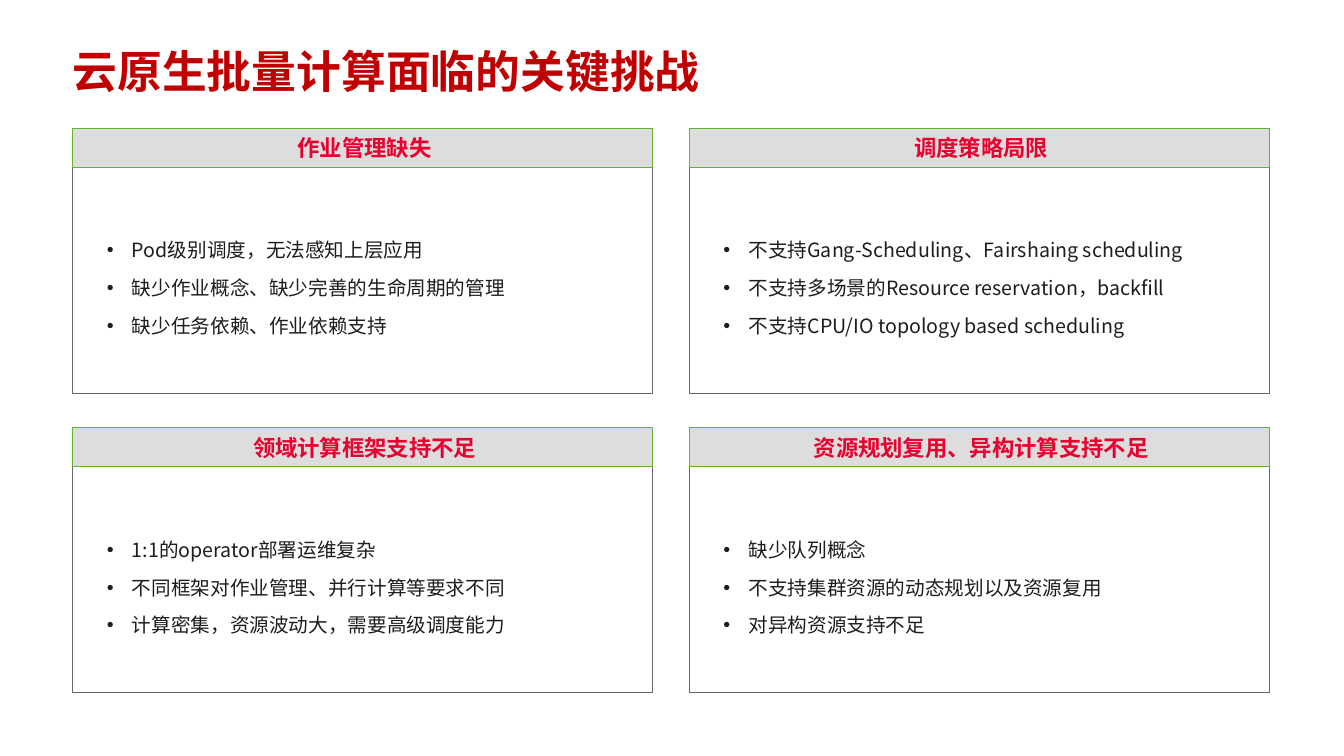
import pptx
import pptx.dml.color
import pptx.enum.shapes
import pptx.enum.text
import pptx.oxml.ns
import pptx.util
from lxml import etree
from pptx.util import Inches

CJK_FONT = "Noto Sans CJK SC"
LEFT, TOP = 0.72, 1.27
COLUMN_STEP, ROW_STEP = 6.12, 2.97
CARD_WIDTH, HEADER_HEIGHT, BODY_HEIGHT = 5.76, 0.39, 2.24
LIST_OFFSET, LIST_HEIGHT = 0.65, 1.73

CHALLENGES = [
    ("作业管理缺失", [
        "Pod级别调度，无法感知上层应用",
        "缺少作业概念、缺少完善的生命周期的管理",
        "缺少任务依赖、作业依赖支持",
    ]),
    ("调度策略局限", [
        "不支持Gang-Scheduling、Fairshaing scheduling",
        "不支持多场景的Resource reservation，backfill",
        "不支持CPU/IO topology based scheduling",
    ]),
    ("领域计算框架支持不足", [
        "1:1的operator部署运维复杂",
        "不同框架对作业管理、并行计算等要求不同",
        "计算密集，资源波动大，需要高级调度能力",
    ]),
    ("资源规划复用、异构计算支持不足", [
        "缺少队列概念",
        "不支持集群资源的动态规划以及资源复用",
        "对异构资源支持不足",
    ]),
]


def color(hex_value):
    return pptx.dml.color.RGBColor.from_string(hex_value)


def add_bullet(paragraph):
    properties = paragraph._p.get_or_add_pPr()
    properties.set("marL", str(Inches(0.59)))
    properties.set("indent", str(Inches(-0.25)))
    for tag, attribute, value in (("a:buFont", "typeface", "Arial"), ("a:buChar", "char", "•")):
        element = etree.SubElement(properties, pptx.oxml.ns.qn(tag))
        element.set(attribute, value)


def write_text(shape, lines, *, size, hex_color, font=CJK_FONT, bold=False,
               anchor="MIDDLE", align="LEFT", line_spacing=None, bullets=False):
    """Fill a shape with one paragraph per line, without inner margins."""
    frame = shape.text_frame
    frame.word_wrap = True
    frame.margin_left = frame.margin_right = frame.margin_top = frame.margin_bottom = 0
    frame.vertical_anchor = pptx.enum.text.MSO_ANCHOR[anchor]
    for index, line in enumerate(lines):
        paragraph = frame.add_paragraph() if index else frame.paragraphs[0]
        paragraph.alignment = pptx.enum.text.PP_ALIGN[align]
        if line_spacing:
            paragraph.line_spacing = pptx.util.Pt(line_spacing)
        if bullets:
            paragraph.level = 1
            add_bullet(paragraph)
        run = paragraph.add_run()
        run.text = line
        run.font.size = pptx.util.Pt(size)
        run.font.bold = bold
        run.font.color.rgb = color(hex_color)
        run.font.name = font
        east_asian = etree.SubElement(run.font._element, pptx.oxml.ns.qn("a:ea"))
        east_asian.set("typeface", CJK_FONT)


def add_text_box(slide, left, top, width, height, lines, **text_format):
    box = slide.shapes.add_textbox(Inches(left), Inches(top), Inches(width), Inches(height))
    write_text(box, lines, **text_format)
    return box


def add_rectangle(slide, left, top, width, height, fill, line):
    rectangle = slide.shapes.add_shape(
        pptx.enum.shapes.MSO_SHAPE.RECTANGLE,
        Inches(left), Inches(top), Inches(width), Inches(height))
    rectangle.shadow.inherit = False
    rectangle.fill.solid()
    rectangle.fill.fore_color.rgb = color(fill)
    rectangle.line.color.rgb = color(line)
    rectangle.line.width = pptx.util.Pt(0.5)
    return rectangle


def add_challenge_card(slide, left, top, heading, points):
    add_rectangle(slide, left, top + HEADER_HEIGHT, CARD_WIDTH, BODY_HEIGHT, "FFFFFF", "666666")
    header = add_rectangle(slide, left, top, CARD_WIDTH, HEADER_HEIGHT, "DDDDDD", "61B230")
    write_text(header, [heading], size=16, hex_color="E9002F", font="Calibri",
               bold=True, align="CENTER")
    header.text_frame.margin_left = Inches(0.04)
    add_text_box(slide, left, top + LIST_OFFSET, CARD_WIDTH, LIST_HEIGHT, points,
                 size=14, hex_color="1D1D1A", line_spacing=27, bullets=True)


def main():
    presentation = pptx.Presentation()
    presentation.slide_width = Inches(13.34)
    presentation.slide_height = Inches(7.5)
    slide = presentation.slides.add_slide(presentation.slide_layouts[6])

    title = add_text_box(slide, LEFT, 0.43, 11.53, 0.54, ["云原生批量计算面临的关键挑战"],
                         size=32, hex_color="C00000", bold=True, anchor="TOP")
    title.text_frame.auto_size = pptx.enum.text.MSO_AUTO_SIZE.SHAPE_TO_FIT_TEXT

    for index, (heading, points) in enumerate(CHALLENGES):
        row, column = divmod(index, 2)
        add_challenge_card(slide, LEFT + column * COLUMN_STEP, TOP + row * ROW_STEP,
                           heading, points)

    presentation.save("out.pptx")


if __name__ == "__main__":
    main()
